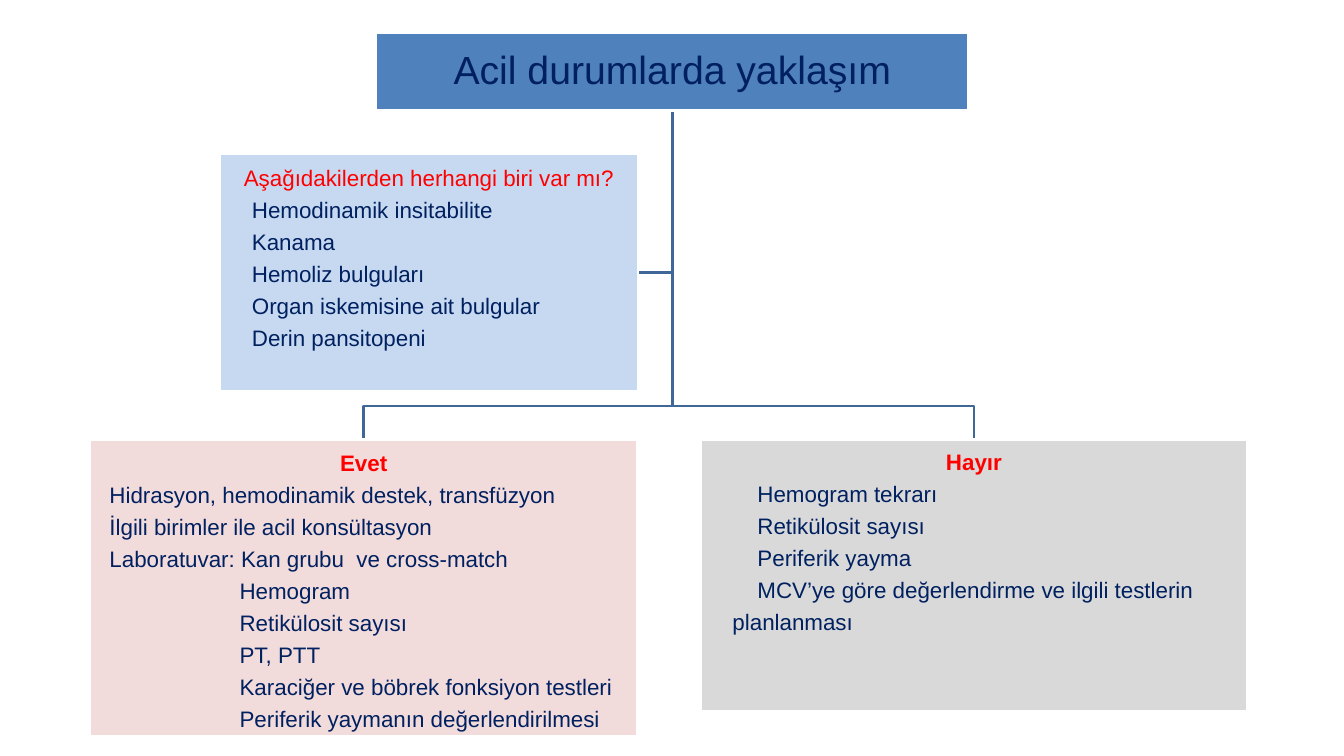
from pptx import Presentation
from pptx import util as u
from pptx.dml.color import RGBColor
from pptx.enum import shapes, text

COLORS = {
    "title": "4F81BD", "question": "C6D9F1", "yes": "F2DCDB", "no": "D9D9D9",
    "border": "FFFFFF", "link": "3F6797", "heading": "FF0000", "body": "002060",
}

# Each item is a line of text and its left indent in cm
QUESTION_ITEMS = [(item, 0.78) for item in (
    "Hemodinamik insitabilite", "Kanama", "Hemoliz bulguları",
    "Organ iskemisine ait bulgular", "Derin pansitopeni")]
YES_ITEMS = [(item, 0.47) for item in (
    "Hidrasyon, hemodinamik destek, transfüzyon",
    "İlgili birimler ile acil konsültasyon",
    "Laboratuvar: Kan grubu  ve cross-match")]
YES_ITEMS += [(item, 3.75) for item in (
    "Hemogram", "Retikülosit sayısı", "PT, PTT",
    "Karaciğer ve böbrek fonksiyon testleri",
    "Periferik yaymanın değerlendirilmesi")]
NO_ITEMS = [(item, 1.41) for item in (
    "Hemogram tekrarı", "Retikülosit sayısı", "Periferik yayma",
    "MCV’ye göre değerlendirme ve ilgili testlerin")]
NO_ITEMS += [("planlanması", 0.78)]


def rgb(name):
    return RGBColor.from_string(COLORS[name])


def set_all(target, **values):
    for name, value in values.items():
        setattr(target, name, value)


def set_outline(shape, color):
    shape.shadow.inherit = False
    shape.line.color.rgb = rgb(color)
    shape.line.width = u.Pt(2)


def add_box(page, fill, left, top, width, height, anchor, inset_top):
    """Place a filled rectangle with a white border."""
    box = page.shapes.add_shape(
        shapes.MSO_SHAPE.RECTANGLE,
        u.Cm(left), u.Cm(top), u.Cm(width), u.Cm(height))
    box.fill.solid()
    box.fill.fore_color.rgb = rgb(fill)
    set_outline(box, "border")
    set_all(box.text_frame, word_wrap=True, vertical_anchor=anchor,
            margin_left=u.Cm(0.03), margin_right=u.Cm(0.03),
            margin_top=u.Cm(inset_top), margin_bottom=0)
    return box


def write(para, words, color, size=16, bold=False, indent=None):
    """Fill a paragraph: centred, unless it has an indent."""
    centred = indent is None
    set_all(para, line_spacing=0.9, space_after=u.Pt(5.6),
            alignment=text.PP_ALIGN.CENTER if centred else text.PP_ALIGN.LEFT)
    if not centred:
        props = para._p.get_or_add_pPr()
        props.set("marL", str(u.Cm(indent)))
        props.set("indent", "0")
    span = para.add_run()
    span.text = words
    set_all(span.font, name="Arial", size=u.Pt(size), bold=bold)
    span.font.color.rgb = rgb(color)


def add_title(page, left, top, width, height):
    box = add_box(page, "title", left, top, width, height,
                  text.MSO_ANCHOR.MIDDLE, 0)
    write(box.text_frame.paragraphs[0], "Acil durumlarda yaklaşım", "body", 28)
    return box


def add_list_box(page, fill, heading, items, left, top, width, height,
                 inset_top, bold=True):
    box = add_box(page, fill, left, top, width, height,
                  text.MSO_ANCHOR.TOP, inset_top)
    frame = box.text_frame
    write(frame.paragraphs[0], heading, "heading", bold=bold)
    for words, indent in items:
        write(frame.add_paragraph(), words, "body", indent=indent)
    return box


def add_link(page, start, *corners):
    """Draw an open angled outline behind the boxes."""
    builder = page.shapes.build_freeform(*start)
    builder.add_line_segments(corners, close=False)
    link = builder.convert_to_shape()
    link.fill.background()
    set_outline(link, "link")
    page.shapes._spTree.insert(2, link._element)


def add_tree(page, title, question, answers, bar_top):
    """Link the title to the question and to both answers."""
    trunk = title.left + title.width // 2
    start = (trunk, title.top + title.height)
    bar = u.Cm(bar_top)
    for box in answers:
        center = box.left + box.width // 2
        add_link(page, start, (trunk, bar), (center, bar), (center, box.top))
    middle = question.top + question.height // 2
    add_link(page, start, (trunk, middle),
             (question.left + question.width, middle))


def build_page(page):
    title = add_title(page, 9.47, 0.83, 14.94, 1.96)
    yes = add_list_box(page, "yes", "Evet", YES_ITEMS,
                       2.26, 11.07, 13.81, 7.49, 0.32)
    no = add_list_box(page, "no", "Hayır", NO_ITEMS,
                      17.65, 11.07, 13.79, 6.86, 0.3)
    question = add_list_box(
        page, "question", "Aşağıdakilerden herhangi biri var mı?",
        QUESTION_ITEMS, 5.54, 3.86, 10.54, 6, 0.36, bold=False)
    add_tree(page, title, question, [yes, no], 10.23)


def main():
    deck = Presentation()
    set_all(deck, slide_width=u.Cm(33.87), slide_height=u.Cm(19.05))
    build_page(deck.slides.add_slide(deck.slide_layouts[6]))
    deck.save("out.pptx")


if __name__ == "__main__":
    main()
